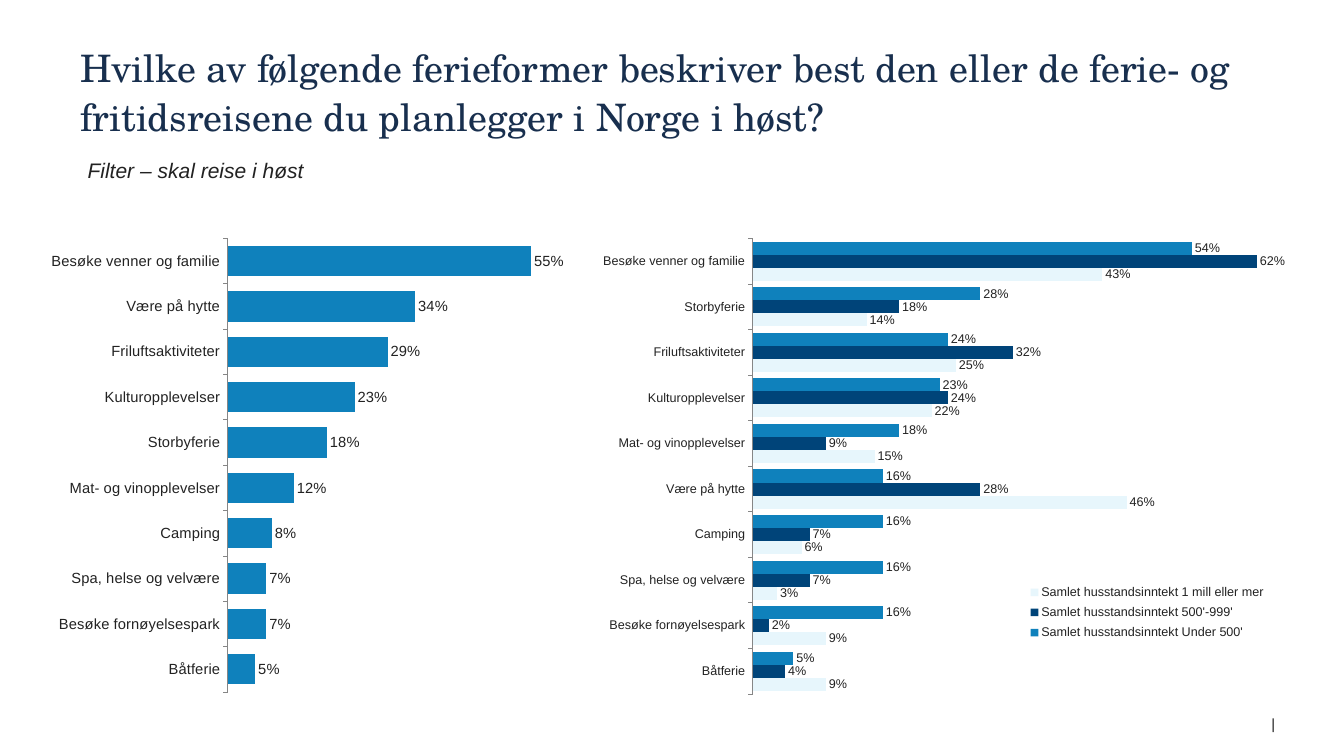
from dataclasses import dataclass

from lxml import etree
from pptx import Presentation
from pptx.chart.data import CategoryChartData
from pptx.dml.color import RGBColor
from pptx.enum.chart import XL_CHART_TYPE, XL_LABEL_POSITION, XL_LEGEND_POSITION, XL_TICK_MARK
from pptx.enum.text import MSO_ANCHOR, PP_ALIGN
from pptx.oxml.ns import qn
from pptx.util import Inches, Pt

BAR_CLUSTERED = XL_CHART_TYPE.BAR_CLUSTERED
OUTSIDE_END = XL_LABEL_POSITION.OUTSIDE_END
LEGEND_RIGHT = XL_LEGEND_POSITION.RIGHT
TICK_OUTSIDE, TICK_NONE = XL_TICK_MARK.OUTSIDE, XL_TICK_MARK.NONE
TOP, MIDDLE = MSO_ANCHOR.TOP, MSO_ANCHOR.MIDDLE
LEFT, RIGHT = PP_ALIGN.LEFT, PP_ALIGN.RIGHT


@dataclass(frozen=True)
class Theme:
    text: str = "222222"
    title: str = "182F4E"
    axis: str = "868686"
    blue: str = "0F81BC"
    navy: str = "004479"
    pale: str = "E7F6FC"
    body_font: str = "Arial"
    title_font: str = "TeX Gyre Schola"
    title_size: int = 36
    subtitle_size: int = 20
    chart_size: int = 14
    small_size: int = 12


THEME = Theme()

ALL_CATEGORIES = [
    "Besøke venner og familie", "Være på hytte", "Friluftsaktiviteter",
    "Kulturopplevelser", "Storbyferie", "Mat- og vinopplevelser", "Camping",
    "Spa, helse og velvære", "Besøke fornøyelsespark", "Båtferie",
]
ALL_SERIES = [("Series 1", [55, 34, 29, 23, 18, 12, 8, 7, 7, 5], THEME.blue)]

INCOME_CATEGORIES = [
    "Besøke venner og familie", "Storbyferie", "Friluftsaktiviteter",
    "Kulturopplevelser", "Mat- og vinopplevelser", "Være på hytte", "Camping",
    "Spa, helse og velvære", "Besøke fornøyelsespark", "Båtferie",
]
INCOME_SERIES = [
    ("Samlet husstandsinntekt Under 500'",
     [54, 28, 24, 23, 18, 16, 16, 16, 16, 5], THEME.blue),
    ("Samlet husstandsinntekt 500'-999'",
     [62, 18, 32, 24, 9, 28, 7, 7, 2, 4], THEME.navy),
    ("Samlet husstandsinntekt 1 mill eller mer",
     [43, 14, 25, 22, 15, 46, 6, 3, 9, 9], THEME.pale),
]


def inches(box):
    return [Inches(length) for length in box]


def add_text(slide, box, text, size=THEME.chart_size, font=THEME.body_font,
             color=THEME.text, italic=False, align=LEFT, anchor=TOP,
             insets=(0, 0, 0, 0), line_spacing=1.0):
    frame = slide.shapes.add_textbox(*inches(box)).text_frame
    frame.word_wrap = True
    frame.vertical_anchor = anchor
    (frame.margin_left, frame.margin_top,
     frame.margin_right, frame.margin_bottom) = inches(insets)
    paragraph = frame.paragraphs[0]
    paragraph.alignment = align
    paragraph.line_spacing = line_spacing
    run = paragraph.add_run()
    run.text = text
    run.font.size = Pt(size)
    run.font.name = font
    run.font.italic = italic
    run.font.color.rgb = RGBColor.from_string(color)


def set_layout(element, position, box, inner=False):
    for old_layout in element.findall(qn("c:layout")):
        element.remove(old_layout)
    layout = etree.Element(qn("c:layout"))
    manual = etree.SubElement(layout, qn("c:manualLayout"))
    settings = [("layoutTarget", "inner")] if inner else []
    settings += [("xMode", "edge"), ("yMode", "edge")]
    settings += zip("xywh", box)
    for tag, value in settings:
        etree.SubElement(manual, qn(f"c:{tag}")).set("val", str(value))
    element.insert(position, layout)


def add_bar_chart(slide, box, categories, series_list, size, maximum, plot_box, legend_box=None):
    chart_data = CategoryChartData(number_format="0%")
    chart_data.categories = categories
    for name, percentages, _ in series_list:
        chart_data.add_series(name, [value / 100 for value in percentages])
    chart = slide.shapes.add_chart(BAR_CLUSTERED, *inches(box), chart_data).chart
    chart.has_title = False
    chart.font.size = Pt(size)
    chart.font.name = THEME.body_font
    chart.font.color.rgb = RGBColor.from_string(THEME.text)

    category_axis = chart.category_axis
    category_axis.reverse_order = True
    category_axis.major_tick_mark = TICK_OUTSIDE
    category_axis.minor_tick_mark = TICK_NONE
    category_axis.has_major_gridlines = False
    category_axis.format.line.color.rgb = RGBColor.from_string(THEME.axis)
    category_axis.format.line.width = Pt(0.75)
    value_axis = chart.value_axis
    value_axis.minimum_scale = 0
    value_axis.maximum_scale = maximum
    value_axis.has_major_gridlines = False
    value_axis.visible = False

    plot = chart.plots[0]
    plot.gap_width = 50
    plot.overlap = 0
    plot.vary_by_categories = False
    for series, (_, _, color) in zip(plot.series, series_list):
        series.format.fill.solid()
        series.format.fill.fore_color.rgb = RGBColor.from_string(color)
        series.invert_if_negative = False
    plot.has_data_labels = True
    labels = plot.data_labels
    labels.show_value = True
    labels.number_format = "0%"
    labels.number_format_is_linked = False
    labels.position = OUTSIDE_END

    chart_element = chart.element.find(qn("c:chart"))
    set_layout(chart_element.find(qn("c:plotArea")), 0, plot_box, inner=True)
    chart.has_legend = legend_box is not None
    if legend_box:
        chart.legend.position = LEGEND_RIGHT
        chart.legend.include_in_layout = False
        set_layout(chart_element.find(qn("c:legend")), 1, legend_box)


def add_heading(slide, box):
    left, top, width, height = box
    add_text(slide, box,
             "Hvilke av følgende ferieformer beskriver best den eller de "
             "ferie- og fritidsreisene du planlegger i Norge i høst?",
             size=THEME.title_size, font=THEME.title_font, color=THEME.title,
             anchor=MIDDLE, insets=(0, 0, 0, 0.6), line_spacing=1.08)
    add_text(slide, (left, top + 1.5, 4.71, 0.44), "Filter – skal reise i høst",
             size=THEME.subtitle_size, italic=True, insets=(0.1, 0.05, 0.1, 0.05))


def add_footer(slide, box):
    add_text(slide, box, "|", align=RIGHT)


def main():
    presentation = Presentation()
    presentation.slide_width = Inches(17.78)
    presentation.slide_height = Inches(10)
    slide = presentation.slides.add_slide(presentation.slide_layouts[6])
    add_footer(slide, (16.08, 9.46, 0.79, 0.24))
    add_heading(slide, (1.06, 0.53, 15.65, 1.93))
    add_bar_chart(slide, (0.58, 3.03, 6.95, 6.25), ALL_CATEGORIES, ALL_SERIES,
                  THEME.chart_size, 0.6, (0.35, 0.02, 0.63, 0.96))
    add_bar_chart(slide, (7.85, 3.03, 10.04, 6.34), INCOME_CATEGORIES, INCOME_SERIES,
                  THEME.small_size, 0.7, (0.21, 0.02, 0.75, 0.95),
                  legend_box=(0.56, 0.73, 0.34, 0.14))
    presentation.save("out.pptx")


if __name__ == "__main__":
    main()
